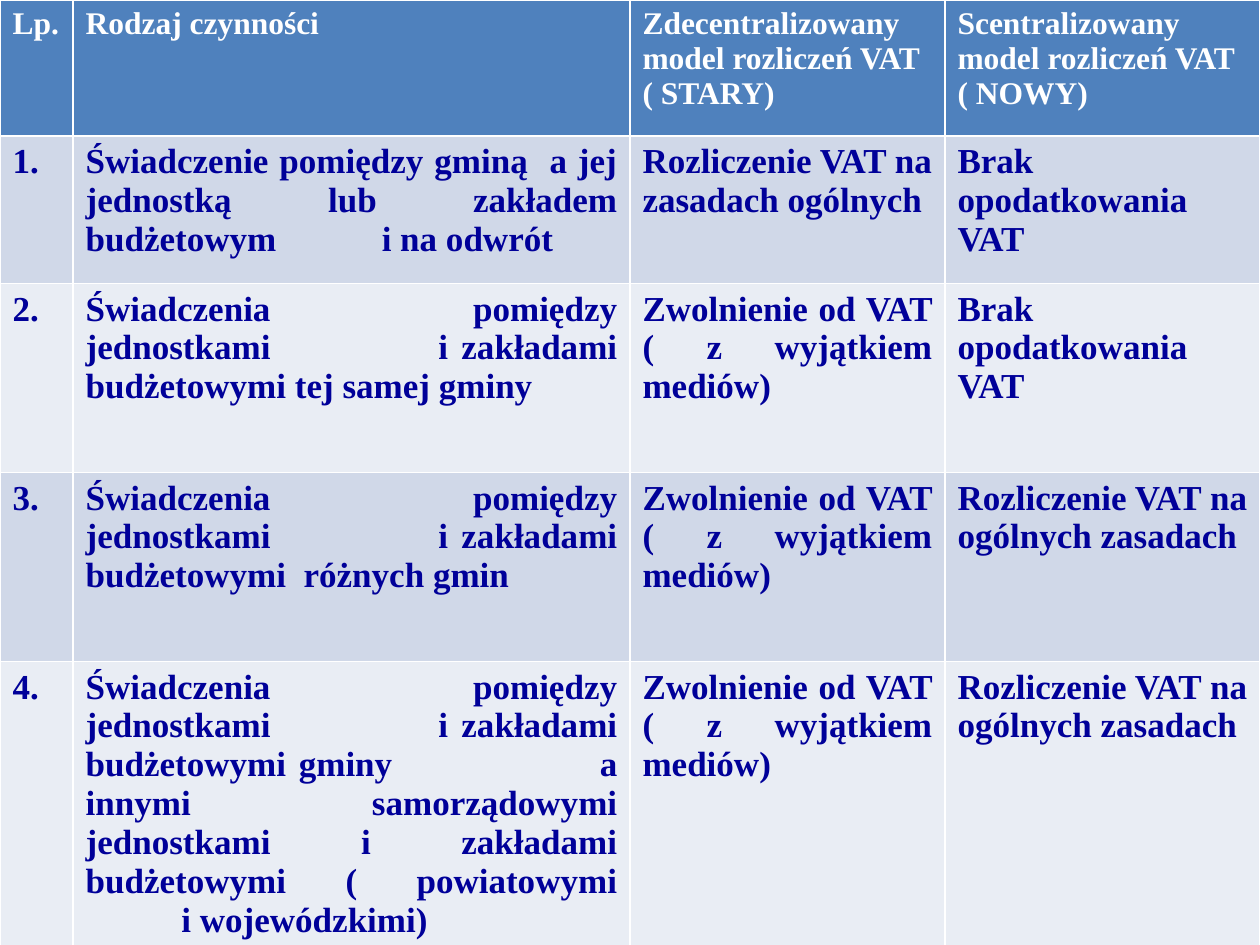
from dataclasses import dataclass

from lxml import etree
from pptx import Presentation
from pptx.dml.color import RGBColor
from pptx.enum import text
from pptx.oxml.ns import qn
from pptx.util import Inches, Pt

COLORS = {
    "head": "4F81BD",
    "odd": "D0D8E8",
    "even": "E9EDF4",
    "white": "FFFFFF",
    "navy": "000099",
}
FONT = "Times New Roman"
WIDTHS = [0.58, 4.42, 2.5, 2.5]
HEIGHTS = [1.08, 1.17, 1.5, 1.5, 1.5]


@dataclass
class Entry:
    """Cell content: paragraphs, each a list of lines."""
    paras: list[list[str]]
    just: bool = False
    tabs: tuple[float, ...] = ()


def plain(words: str) -> Entry:
    return Entry([[words]])


def even(words: str, *tabs: float) -> Entry:
    """Justified entry with tab stops in inches."""
    return Entry([[words]], True, tabs)


EXEMPT = Entry([["Zwolnienie od VAT "], ["( z wyjątkiem mediów)"]], True)
UNTAXED = plain("Brak opodatkowania VAT")
TAXED = even("Rozliczenie VAT na ogólnych zasadach")
UNITS = "Świadczenia pomiędzy jednostkami\ti zakładami budżetowymi "
OTHERS = Entry([[
    "Świadczenia pomiędzy jednostkami\ti zakładami budżetowymi gminy\t\ta "
    "innymi samorządowymi jednostkami i zakładami budżetowymi ( powiatowymi",
    "\ti wojewódzkimi)",
]], True, (0.76, 2.8, 4.05))

ROWS = [
    [plain("Lp."), plain("Rodzaj czynności"),
     plain("Zdecentralizowany model rozliczeń VAT ( STARY)"),
     plain("Scentralizowany model rozliczeń VAT ( NOWY)")],
    [plain("1."),
     even("Świadczenie pomiędzy gminą  a jej jednostką lub zakładem "
          "budżetowym\ti na odwrót ", 2.35),
     plain("Rozliczenie VAT na zasadach ogólnych"), UNTAXED],
    [plain("2."), even(UNITS + "tej samej gminy ", 2.8), EXEMPT, UNTAXED],
    [even("3. "), even(UNITS + " różnych gmin", 2.8), EXEMPT, TAXED],
    [even("4. "), OTHERS, EXEMPT, TAXED],
]


def set_tabs(para, stops: tuple[float, ...]) -> None:
    tabs = etree.SubElement(para._p.get_or_add_pPr(), qn("a:tabLst"))
    for stop in stops:
        etree.SubElement(tabs, qn("a:tab"), pos=str(Inches(stop)), algn="l")


def add_run(para, words: str, size: int, color: str) -> None:
    run = para.add_run()
    run.text = words
    run.font.name = FONT
    run.font.size = Pt(size)
    run.font.bold = True
    run.font.color.rgb = RGBColor.from_string(COLORS[color])


def fill_cell(cell, entry: Entry, fill: str, size: int, color: str) -> None:
    cell.fill.solid()
    cell.fill.fore_color.rgb = RGBColor.from_string(COLORS[fill])
    frame = cell.text_frame
    for i, lines in enumerate(entry.paras):
        para = frame.add_paragraph() if i else frame.paragraphs[0]
        if entry.just:
            para.alignment = text.PP_ALIGN.JUSTIFY
        if entry.tabs:
            set_tabs(para, entry.tabs)
        for j, line in enumerate(lines):
            if j:
                para.add_line_break()
            add_run(para, line, size, color)


def main() -> None:
    deck = Presentation()
    deck.slide_width, deck.slide_height = Inches(10), Inches(7.5)
    slide = deck.slides.add_slide(deck.slide_layouts[6])
    table = slide.shapes.add_table(
        len(HEIGHTS), len(WIDTHS), 0, 0, Inches(10), Inches(sum(HEIGHTS))).table
    for col, width in zip(table.columns, WIDTHS):
        col.width = Inches(width)
    for r, (row, height) in enumerate(zip(table.rows, HEIGHTS)):
        row.height = Inches(height)
        if r == 0:
            look = ("head", 18, "white")
        else:
            look = ("odd" if r % 2 else "even", 20, "navy")
        for cell, entry in zip(row.cells, ROWS[r]):
            fill_cell(cell, entry, *look)
    deck.save("out.pptx")


if __name__ == "__main__":
    main()
